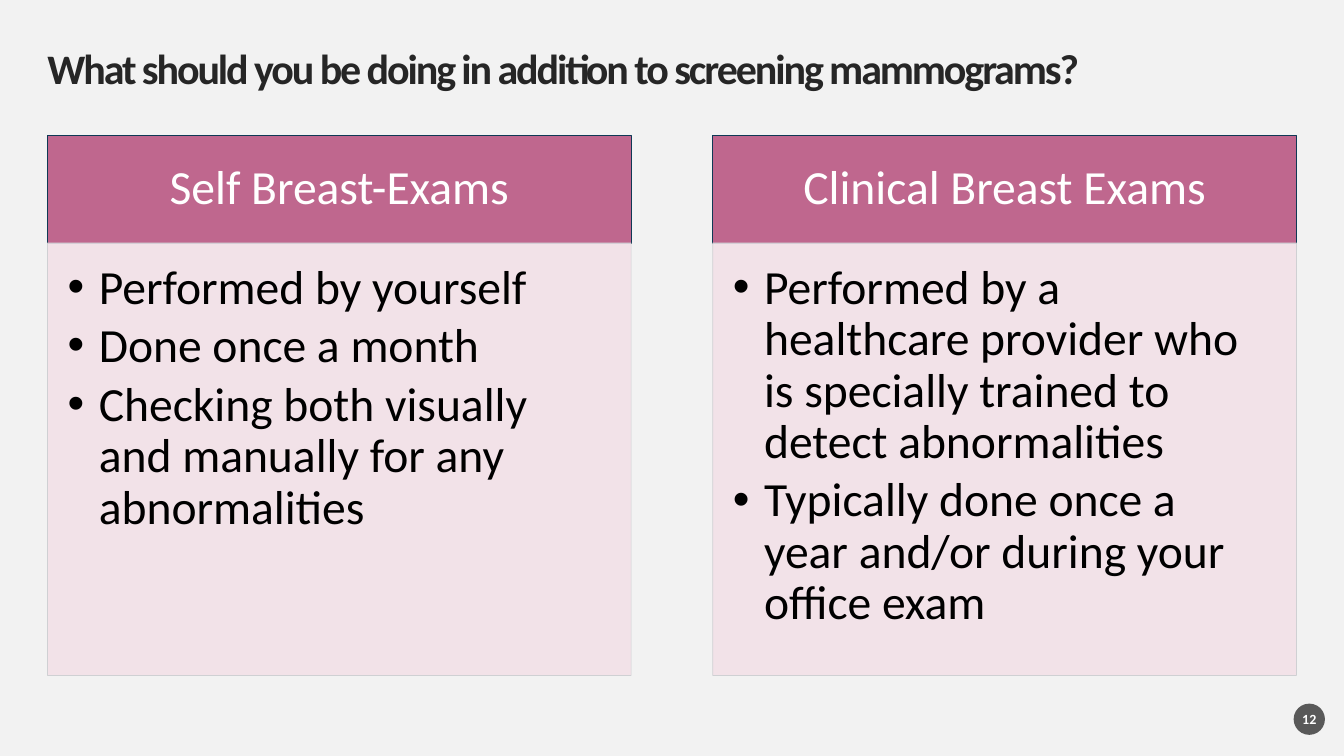
import pptx
import pptx.util
import pptx.dml.color
import pptx.enum.shapes
import pptx.enum.text
import pptx.oxml.ns
from lxml import etree

Pt = pptx.util.Pt
Inches = pptx.util.Inches
qn = pptx.oxml.ns.qn
Kind = pptx.enum.shapes.MSO_SHAPE
Align = pptx.enum.text.PP_ALIGN
Anchor = pptx.enum.text.MSO_ANCHOR

HUES = {
    "back": "F2F2F2", "title": "262626", "badge": "595959", "white": "FFFFFF",
    "head": "BF678E", "edge": "0F3955", "body": "F2E1E8", "rim": "CCCED1",
    "black": "000000",
}
LEFT, WIDTH, PITCH = 3.53, 43.43, 49.5
TOP, HEAD, BODY = 17.87, 14.27, 57.2
CARDS = [
    ("Self Breast-Exams", [
        "Performed by yourself",
        "Done once a month",
        "Checking both visually and manually for any abnormalities",
    ]),
    ("Clinical Breast Exams", [
        "Performed by a healthcare provider who is specially trained to detect abnormalities",
        "Typically done once a year and/or during your office exam",
    ]),
]


class Deck:
    """Holds the style and the current slide; boxes are in percent of its size."""

    def __init__(self):
        self.show = pptx.Presentation()
        self.show.slide_width = Inches(13.33)
        self.show.slide_height = Inches(7.5)
        self.font = "Calibri"
        self.slide = self.show.slides.add_slide(self.show.slide_layouts[5])
        self.paint(self.slide.background.fill, "back")

    def hue(self, name):
        return pptx.dml.color.RGBColor.from_string(HUES[name])

    def paint(self, fill, name):
        fill.solid()
        fill.fore_color.rgb = self.hue(name)

    def place(self, box):
        wide, high = self.show.slide_width, self.show.slide_height
        return [round(part * side / 100) for part, side in zip(box, (wide, high, wide, high))]

    def frame(self, shape, pads=(0, 0, 0, 0), anchor=Anchor.MIDDLE):
        frame = shape.text_frame
        frame.word_wrap = True
        frame.auto_size = pptx.enum.text.MSO_AUTO_SIZE.NONE
        frame.vertical_anchor = anchor
        (frame.margin_left, frame.margin_top,
         frame.margin_right, frame.margin_bottom) = map(Inches, pads)
        return frame

    def text(self, para, words, size, name, bold=False, align=Align.LEFT, after=0, lead=0.9):
        para.alignment = align
        para.line_spacing = lead
        para.space_before = Pt(0)
        para.space_after = Pt(after)
        run = para.add_run()
        run.text = words
        run.font.name = self.font
        run.font.size = Pt(size)
        run.font.bold = bold
        run.font.color.rgb = self.hue(name)
        return run

    def title(self, words, box):
        shape = self.slide.shapes.title
        shape.left, shape.top, shape.width, shape.height = self.place(box)
        run = self.text(self.frame(shape).paragraphs[0], words, 30, "title", bold=True)
        run.font._element.set("spc", "-150")

    def shape(self, kind, box, fill, line=None, alpha=None):
        shape = self.slide.shapes.add_shape(kind, *self.place(box))
        shape.shadow.inherit = False
        self.paint(shape.fill, fill)
        if line:
            self.paint(shape.line.fill, line)
            shape.line.width = Pt(0.5)
        else:
            shape.line.fill.background()
        if alpha:
            for tint in list(shape._element.spPr.iter(qn("a:srgbClr"))):
                etree.SubElement(tint, qn("a:alpha"), val=str(alpha * 1000))
        return shape

    def head(self, words, box):
        shape = self.shape(Kind.RECTANGLE, box, "head", "edge")
        frame = self.frame(shape, (0.26, 0.15, 0.26, 0.15))
        self.text(frame.paragraphs[0], words, 34, "white", align=Align.CENTER)

    def list(self, items, box):
        shape = self.shape(Kind.RECTANGLE, box, "body", "rim", alpha=90)
        frame = self.frame(shape, (0.2, 0.2, 0.26, 0.3), Anchor.TOP)
        for at, item in enumerate(items):
            para = frame.add_paragraph() if at else frame.paragraphs[0]
            para.level = 1
            props = para._p.get_or_add_pPr()
            props.set("marL", str(Inches(0.31)))
            props.set("indent", str(-Inches(0.31)))
            etree.SubElement(props, qn("a:buFont"), typeface="Arial")
            etree.SubElement(props, qn("a:buChar"), char="•")
            self.text(para, item, 34, "black", after=5.1)

    def badge(self, words, box):
        shape = self.shape(Kind.OVAL, box, "badge")
        self.text(self.frame(shape).paragraphs[0], words, 10, "white",
                  bold=True, align=Align.CENTER, lead=1.0)


def main():
    deck = Deck()
    deck.title("What should you be doing in addition to screening mammograms?",
               (LEFT, 6.27, PITCH + WIDTH, 6.27))
    deck.badge("12", (96.25, 93.07, 2.33, 4.13))
    for col, (head, items) in enumerate(CARDS):
        left = LEFT + col * PITCH
        deck.head(head, (left, TOP, WIDTH, HEAD))
        deck.list(items, (left, TOP + HEAD, WIDTH, BODY))
    deck.show.save("out.pptx")


if __name__ == "__main__":
    main()
